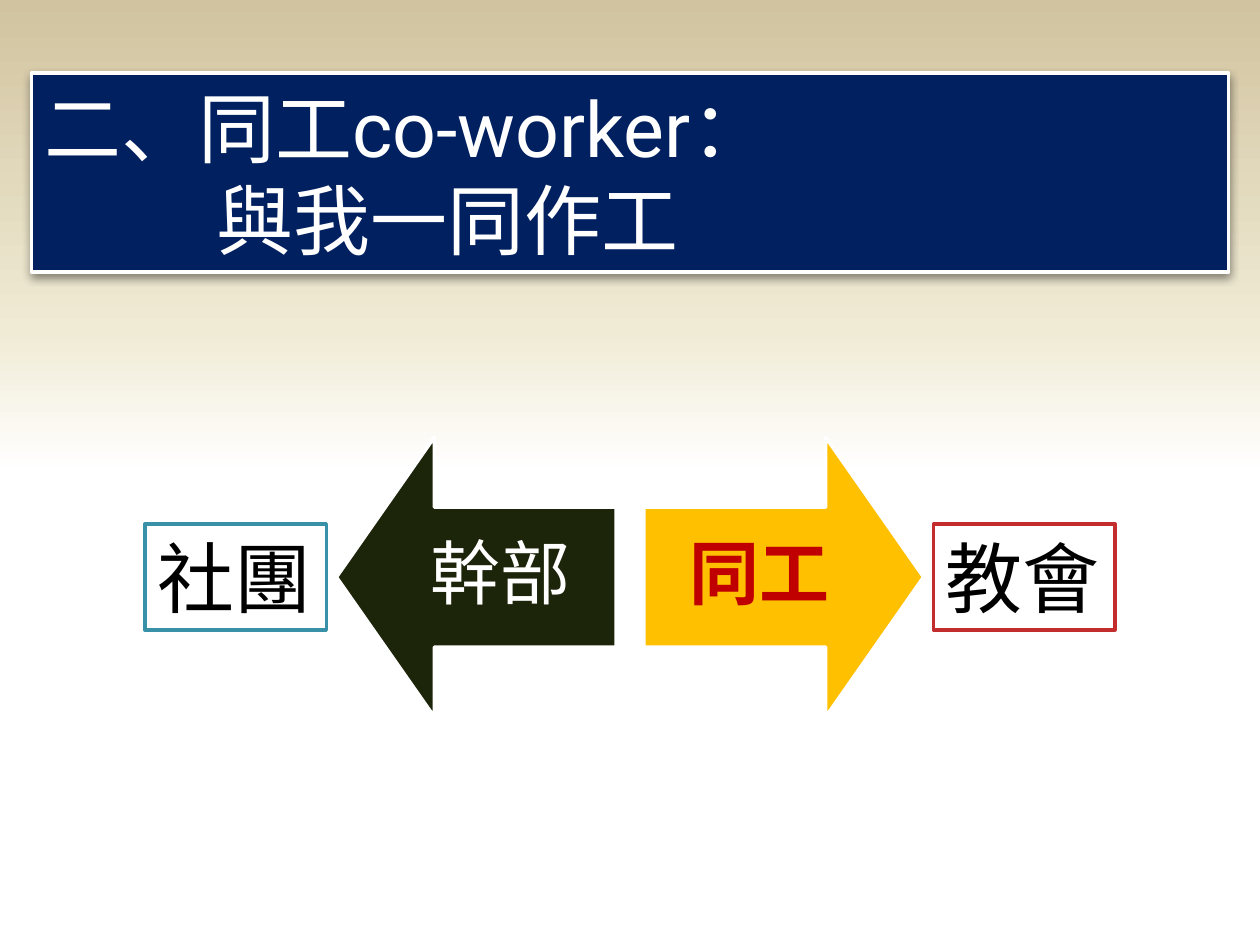
from lxml import etree
from pptx import Presentation, util as u
from pptx.dml.color import RGBColor
from pptx.enum import shapes, text
from pptx.oxml.ns import qn

COLS, ROWS = 40, 30
CELL = u.Inches(0.25)
FONT = "Roboto"
HUE = dict(white="FFFFFF", cream="F0EBD5", sand="D1C39F", navy="002060",
           moss="1C240A", gold="FFC000", red="C00000", teal="3891A7",
           rust="C32D2E", black="000000")


def rgb(name):
    return RGBColor.from_string(HUE[name])


def span(box):
    return [u.Emu(round(n * CELL)) for n in box]


def add(node, tag, **vals):
    return etree.SubElement(node, qn(tag), {k: str(v) for k, v in vals.items()})


def apply(item, vals):
    for key, val in vals.items():
        setattr(item, key, val)


def paint(shape, fill, line):
    shape.fill.solid()
    shape.fill.fore_color.rgb = rgb(fill)
    shape.line.color.rgb = rgb(line)
    shape.line.width = u.Pt(2)


def write(shape, lines, size, color, align, bold=False, **frame):
    body = shape.text_frame
    apply(body, frame)
    body.text = "\n".join(lines)
    for para in body.paragraphs:
        para.alignment = align
        for run in para.runs:
            apply(run.font, dict(name=FONT, size=u.Pt(size), bold=bold))
            run.font.color.rgb = rgb(color)


def backdrop(slide):
    fill = slide.background.fill
    fill.gradient()
    fill.gradient_angle = 90
    stops = next(slide.element.iter(qn("a:gsLst")))
    for stop in list(stops):
        stops.remove(stop)
    for pos, name in ((50, "white"), (65, "cream"), (100, "sand")):
        stop = add(stops, "a:gs", pos=pos * 1000)
        add(stop, "a:srgbClr", val=HUE[name])


def banner(slide, box):
    title = slide.shapes.title
    apply(title, dict(zip(("left", "top", "width", "height"), span(box))))
    paint(title, "navy", "white")
    write(title, ["二、同工co-worker：", "與我一同作工"], 44, "white",
          text.PP_ALIGN.LEFT, vertical_anchor=text.MSO_ANCHOR.MIDDLE,
          word_wrap=True, auto_size=text.MSO_AUTO_SIZE.NONE)
    last = title.text_frame.paragraphs[-1]
    last._p.get_or_add_pPr().set("marL", str(u.Inches(1.37)))
    glow = add(title._element.spPr, "a:effectLst")
    shade = add(glow, "a:outerShdw", blurRad=u.Pt(5), dist=u.Pt(2),
                dir=5400000, rotWithShape=0)
    tint = add(shade, "a:srgbClr", val=HUE["black"])
    add(tint, "a:alpha", val=43000)


def arrow(slide, box, turn, fill, word, color, bold):
    x, y, w, h = box
    shape = slide.shapes.add_shape(shapes.MSO_SHAPE.UP_ARROW, *span(box))
    shape.shadow.inherit = False
    shape.rotation = turn
    shape.adjustments[0], shape.adjustments[1] = 0.5, 0.35
    paint(shape, fill, "white")
    wide = w * 0.83
    left = x + w - wide if turn == 270 else x
    note = slide.shapes.add_textbox(*span((left, y + h / 4, wide, h / 2)))
    pad = u.Inches(0.31)
    write(note, [word], 40, color, text.PP_ALIGN.CENTER, bold,
          word_wrap=True, vertical_anchor=text.MSO_ANCHOR.MIDDLE,
          margin_left=pad, margin_right=pad, margin_top=pad, margin_bottom=pad)
    note.text_frame.paragraphs[0].line_spacing = 0.9


def label(slide, box, word, line):
    shape = slide.shapes.add_shape(shapes.MSO_SHAPE.RECTANGLE, *span(box))
    shape.shadow.inherit = False
    paint(shape, "white", line)
    write(shape, [word], 44, "black", text.PP_ALIGN.LEFT, word_wrap=False,
          vertical_anchor=text.MSO_ANCHOR.TOP,
          auto_size=text.MSO_AUTO_SIZE.SHAPE_TO_FIT_TEXT)


def contrast(slide, box):
    x, y, w, h = box
    mid, gap = x + w / 2, 0.44
    arrow(slide, (mid - gap - h, y, h, h), 270, "moss", "幹部", "white", False)
    arrow(slide, (mid + gap, y, h, h), 90, "gold", "同工", "red", True)
    wide, tall = 5.76, 3.36
    top = y + (h - tall) / 2
    label(slide, (x, top, wide, tall), "社團", "teal")
    label(slide, (x + w - wide, top, wide, tall), "教會", "rust")


def main():
    deck = Presentation()
    deck.slide_width, deck.slide_height = COLS * CELL, ROWS * CELL
    slide = deck.slides.add_slide(deck.slide_layouts[5])
    backdrop(slide)
    banner(slide, (1, 2.32, COLS - 2, 6.32))
    contrast(slide, (4.6, 13.88, COLS - 9.2, 8.88))
    deck.save("out.pptx")


if __name__ == "__main__":
    main()
